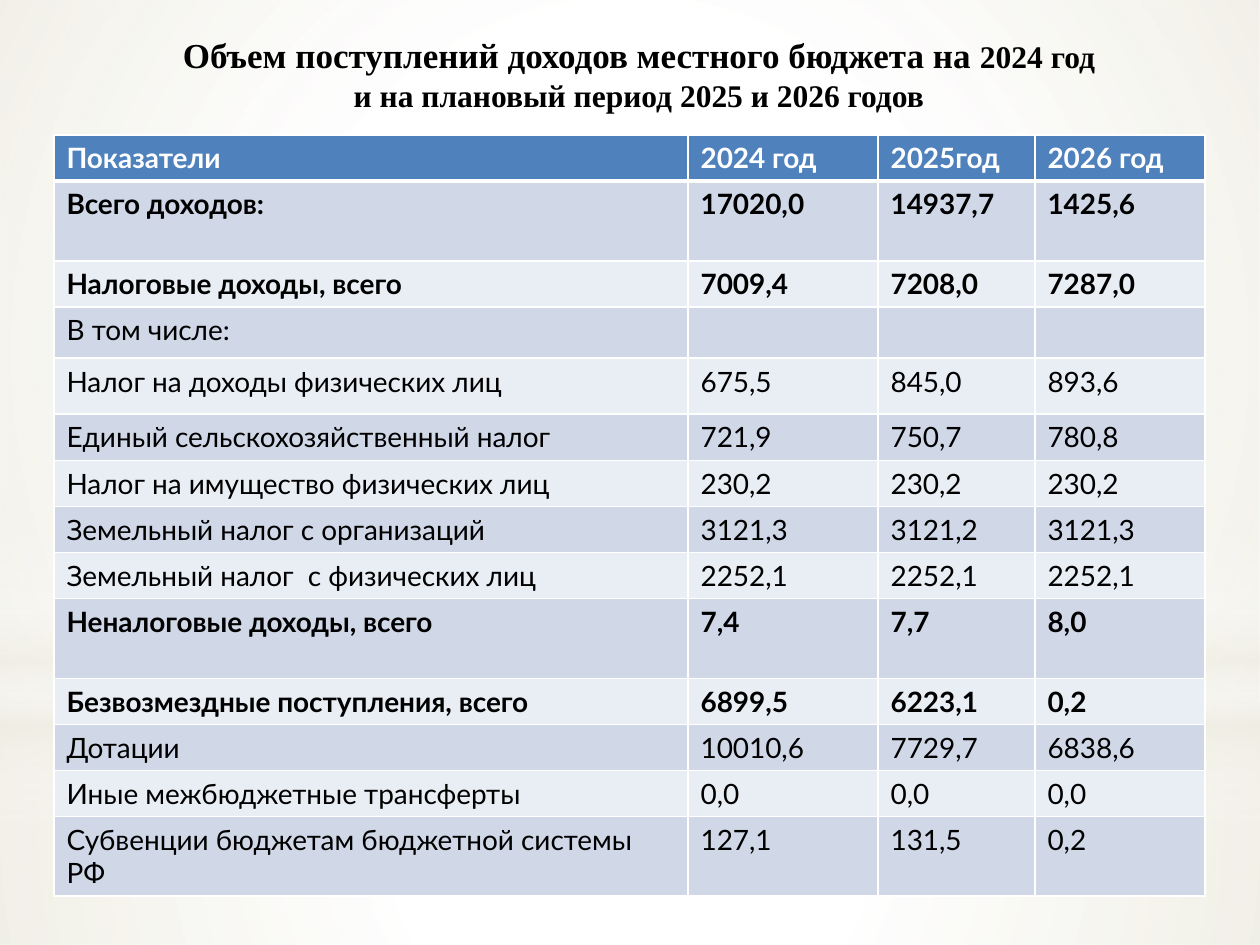
from dataclasses import dataclass

from lxml.etree import SubElement
from pptx import Presentation
from pptx.dml.color import RGBColor
from pptx.enum.shapes import MSO_SHAPE
from pptx.enum.text import MSO_ANCHOR, PP_ALIGN
from pptx.oxml.ns import qn
from pptx.slide import Slide
from pptx.table import _Cell
from pptx.util import Emu, Pt

EMU_PER_PX = 914400 / 126

WHITE = RGBColor(0xFF, 0xFF, 0xFF)
BLACK = RGBColor(0x00, 0x00, 0x00)
CREAM = RGBColor(0xEE, 0xEC, 0xE1)
HEADER_BLUE = RGBColor(0x4F, 0x81, 0xBD)
BAND_DARK = RGBColor(0xD0, 0xD8, 0xE8)
BAND_LIGHT = RGBColor(0xE9, 0xED, 0xF4)

TITLE_FONT = "Times New Roman"
TABLE_FONT = "Lato"
COLUMN_WIDTHS = (634, 190, 157, 170)


@dataclass(frozen=True)
class Stop:
    position: int
    color: RGBColor
    opacity: int


@dataclass(frozen=True)
class Backdrop:
    """A background shape as wide as the slide; radial unless linear is set."""
    shape_type: MSO_SHAPE
    top: int
    height: int
    stops: tuple[Stop, ...]
    linear: bool = False


@dataclass(frozen=True)
class Row:
    height: int
    texts: tuple[str, ...]
    bold: bool = False


BACKDROPS = (
    Backdrop(MSO_SHAPE.RECTANGLE, 703, 242,
             (Stop(0, WHITE, 91), Stop(37, WHITE, 76), Stop(100, CREAM, 79))),
    Backdrop(MSO_SHAPE.RECTANGLE, 0, 703,
             (Stop(0, WHITE, 89), Stop(48, WHITE, 62), Stop(100, CREAM, 79))),
    Backdrop(MSO_SHAPE.RECTANGLE, 519, 315,
             (Stop(0, WHITE, 0), Stop(29, WHITE, 30), Stop(45, CREAM, 40),
              Stop(55, WHITE, 26), Stop(65, CREAM, 60), Stop(100, WHITE, 0)), linear=True),
    Backdrop(MSO_SHAPE.OVAL, 220, 703, (Stop(0, WHITE, 100), Stop(56, WHITE, 0))),
)

ROWS = (
    Row(46, ("Показатели", "2024 год", "2025год", "2026 год"), bold=True),
    Row(80, ("Всего доходов:", "17020,0", "14937,7", "1425,6"), bold=True),
    Row(46, ("Налоговые доходы, всего", "7009,4", "7208,0", "7287,0"), bold=True),
    Row(50, ("В том числе:", "", "", "")),
    Row(56, ("Налог на доходы физических лиц", "675,5", "845,0", "893,6")),
    Row(46, ("Единый сельскохозяйственный налог", "721,9", "750,7", "780,8")),
    Row(46, ("Налог на имущество физических лиц", "230,2", "230,2", "230,2")),
    Row(46, ("Земельный налог с организаций", "3121,3", "3121,2", "3121,3")),
    Row(46, ("Земельный налог  с физических лиц", "2252,1", "2252,1", "2252,1")),
    Row(80, ("Неналоговые доходы, всего", "7,4", "7,7", "8,0"), bold=True),
    Row(46, ("Безвозмездные поступления, всего", "6899,5", "6223,1", "0,2"), bold=True),
    Row(46, ("Дотации", "10010,6", "7729,7", "6838,6")),
    Row(46, ("Иные межбюджетные трансферты", "0,0", "0,0", "0,0")),
    Row(62, ("Субвенции бюджетам бюджетной системы РФ", "127,1", "131,5", "0,2")),
)

TITLE_LINES = (
    (("Объем поступлений доходов местного бюджета на ", 20), ("2024 год", 18)),
    (("и на плановый период 2025 и 2026 годов", 18),),
)


def px(length: int) -> Emu:
    return Emu(round(length * EMU_PER_PX))


def draw_backdrop(slide: Slide, backdrop: Backdrop) -> None:
    shape = slide.shapes.add_shape(
        backdrop.shape_type, 0, px(backdrop.top), px(1260), px(backdrop.height))
    shape.shadow.inherit = False
    shape.line.fill.background()
    shape.fill.gradient()
    gradient = shape._element.spPr.find(qn("a:gradFill"))
    for child in list(gradient):
        gradient.remove(child)
    stop_list = SubElement(gradient, qn("a:gsLst"))
    for stop in backdrop.stops:
        entry = SubElement(stop_list, qn("a:gs"), pos=str(stop.position * 1000))
        color = SubElement(entry, qn("a:srgbClr"), val=str(stop.color))
        SubElement(color, qn("a:alpha"), val=str(stop.opacity * 1000))
    if backdrop.linear:
        SubElement(gradient, qn("a:lin"), ang="5400000", scaled="0")
    else:
        circle = SubElement(gradient, qn("a:path"), path="circle")
        SubElement(circle, qn("a:fillToRect"), l="50000", t="50000", r="50000", b="50000")


def set_borders(cell: _Cell, top: int, bottom: int) -> None:
    """Give a cell white borders, with the top and bottom widths in points."""
    properties = cell._tc.get_or_add_tcPr()
    for side, width in (("L", 1), ("R", 1), ("T", top), ("B", bottom)):
        line = SubElement(properties, qn(f"a:ln{side}"), w=str(Pt(width)))
        SubElement(SubElement(line, qn("a:solidFill")), qn("a:srgbClr"), val=str(WHITE))


def draw_table(slide: Slide) -> None:
    table = slide.shapes.add_table(
        len(ROWS), len(COLUMN_WIDTHS), px(54), px(135),
        px(sum(COLUMN_WIDTHS)), px(sum(row.height for row in ROWS))).table
    for column, width in zip(table.columns, COLUMN_WIDTHS):
        column.width = px(width)
    for index, row in enumerate(ROWS):
        table.rows[index].height = px(row.height)
        band = BAND_DARK if index % 2 else BAND_LIGHT
        for cell, text in zip(table.rows[index].cells, row.texts):
            set_borders(cell, top=3 if index == 1 else 1, bottom=3 if index == 0 else 1)
            cell.fill.solid()
            cell.fill.fore_color.rgb = band if index else HEADER_BLUE
            cell.text_frame.text = text
            for run in cell.text_frame.paragraphs[0].runs:
                run.font.name = TABLE_FONT
                run.font.size = Pt(16)
                run.font.bold = row.bold
                run.font.color.rgb = BLACK if index else WHITE


def draw_title(slide: Slide) -> None:
    text_frame = slide.shapes.add_textbox(px(113), px(16), px(1052), px(115)).text_frame
    text_frame.word_wrap = True
    text_frame.vertical_anchor = MSO_ANCHOR.MIDDLE
    for index, line in enumerate(TITLE_LINES):
        paragraph = text_frame.add_paragraph() if index else text_frame.paragraphs[0]
        paragraph.alignment = PP_ALIGN.CENTER
        for text, size in line:
            run = paragraph.add_run()
            run.text = text
            run.font.name = TITLE_FONT
            run.font.size = Pt(size)
            run.font.bold = True
            run.font.color.rgb = BLACK


def main() -> None:
    presentation = Presentation()
    presentation.slide_width = px(1260)
    presentation.slide_height = px(945)
    slide = presentation.slides.add_slide(presentation.slide_layouts[6])
    slide.background.fill.solid()
    slide.background.fill.fore_color.rgb = WHITE
    for backdrop in BACKDROPS:
        draw_backdrop(slide, backdrop)
    draw_table(slide)
    draw_title(slide)
    presentation.save("out.pptx")


if __name__ == "__main__":
    main()
